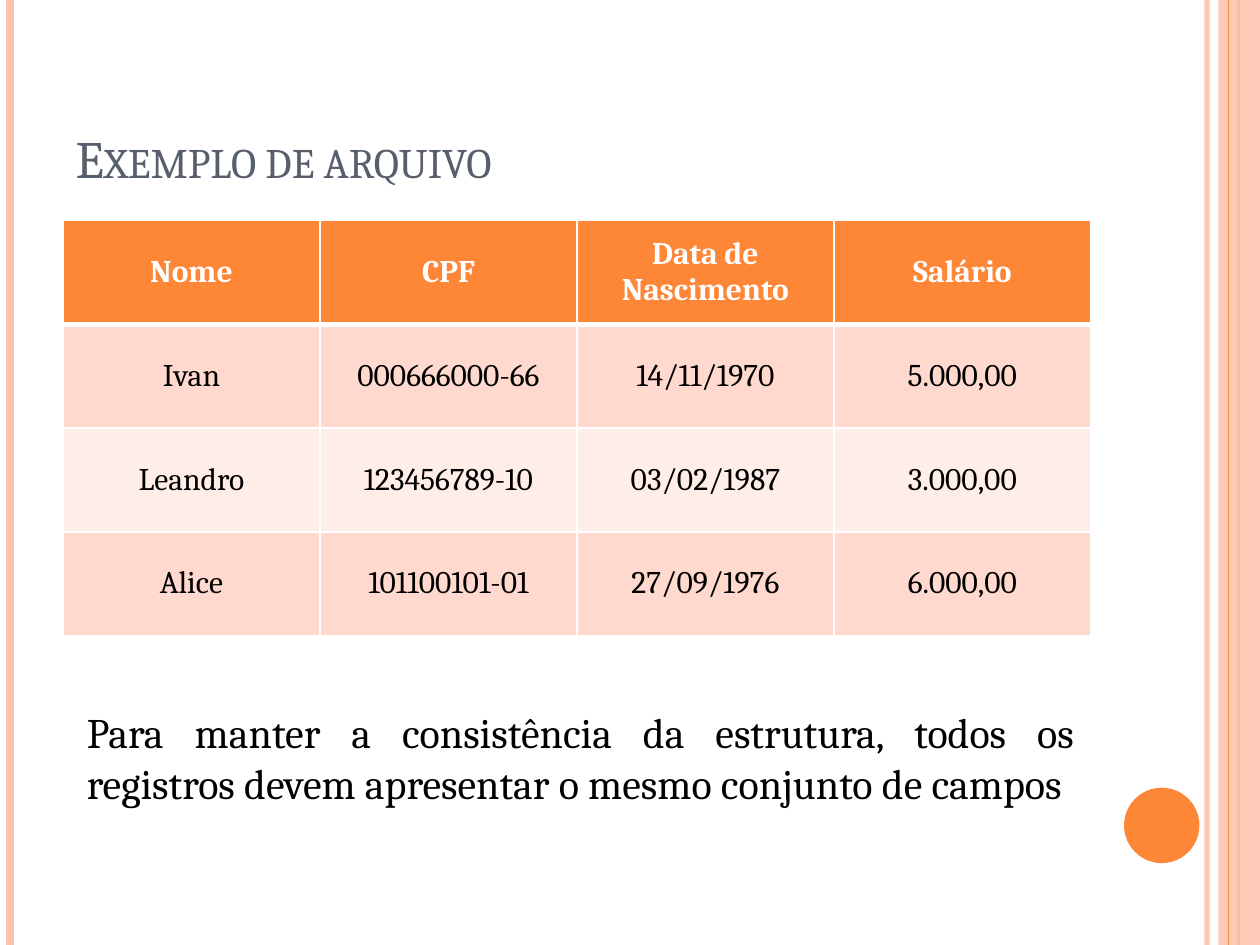
from lxml import etree
from pptx import Presentation
from pptx.dml.color import RGBColor
from pptx.enum.shapes import MSO_CONNECTOR, MSO_SHAPE
from pptx.enum.text import MSO_ANCHOR, MSO_AUTO_SIZE, PP_ALIGN
from pptx.oxml import parse_xml
from pptx.oxml.ns import qn
from pptx.util import Cm, Pt

STRAIGHT = MSO_CONNECTOR.STRAIGHT
RECT, OVAL = MSO_SHAPE.RECTANGLE, MSO_SHAPE.OVAL
LEFT, CENTER, JUSTIFY = PP_ALIGN.LEFT, PP_ALIGN.CENTER, PP_ALIGN.JUSTIFY
MIDDLE, BOTTOM = MSO_ANCHOR.MIDDLE, MSO_ANCHOR.BOTTOM
NO_FIT = MSO_AUTO_SIZE.NONE
ORANGE, PINK, WHITE, BLACK = "FE8637", "FEC3AE", "FFFFFF", "000000"
NS = "http://schemas.openxmlformats.org/drawingml/2006/main"


def rgb(value):
    return RGBColor.from_string(value)


def write(tf, text, align, color, **font):
    p = tf.paragraphs[0]
    p.alignment = align
    r = p.add_run()
    r.text = text
    r.font.color.rgb = rgb(color)
    for name, value in {"name": "Cambria", **font}.items():
        setattr(r.font, name, value)
    return r


prs = Presentation()
prs.slide_width, prs.slide_height = Cm(25.4), Cm(19.05)
s = prs.slides.add_slide(prs.slide_layouts[5])

# Side stripes and circle, back to front: x, width (pt), colour, opacity (%)
stripes = [(24.33, 3, PINK, 93), (0.2, 4.5, PINK, 100),
           (24.97, 1.5, ORANGE, 100), (24.77, 0.75, ORANGE, 100)]
band = (RECT, 24.56, 0, 0.84, 19.05, PINK, 87)
circle = (OVAL, 22.66, 15.88, 1.52, 1.52, ORANGE, 100)
for part in [*stripes[:3], band, stripes[3], circle]:
    *place, color, opacity = part
    if part in stripes:
        x, width = place
        sp = s.shapes.add_connector(STRAIGHT, Cm(x), 0, Cm(x), prs.slide_height)
        sp.line.width = Pt(width)
        fill = sp.line.fill
    else:
        kind, *box = place
        sp = s.shapes.add_shape(kind, *map(Cm, box))
        sp.shadow.inherit = False
        sp.line.fill.background()
        fill = sp.fill
    fill.solid()
    fill.fore_color.rgb = rgb(color)
    if part in stripes:
        etree.SubElement(sp._element.spPr, qn("a:effectLst"))
    if opacity < 100:
        clr = next(sp._element.spPr.iter(qn("a:srgbClr")))
        etree.SubElement(clr, qn("a:alpha"), val=str(opacity * 1000))

# Title
title = s.shapes.title
title.left, title.top, title.width, title.height = map(Cm, (1.27, 0.76, 20.75, 3.18))
tf = title.text_frame
tf.auto_size = NO_FIT
tf.vertical_anchor = BOTTOM
r = write(tf, "Exemplo de arquivo", LEFT, "575F6D", size=Pt(30))
r.font._element.set("cap", "small")

# Table of records
rows = [
    ("Nome", "CPF", "Data de Nascimento", "Salário"),
    ("Ivan", "000666000-66", "14/11/1970", "5.000,00"),
    ("Leandro", "123456789-10", "03/02/1987", "3.000,00"),
    ("Alice", "101100101-01", "27/09/1976", "6.000,00"),
]
row_fills = [ORANGE, "FFD9CE", "FFEDE8", "FFD9CE"]
table = s.shapes.add_table(4, 4, Cm(1.27), Cm(4.45), Cm(20.72), Cm(8.36)).table
for i, values in enumerate(rows):
    for j, value in enumerate(values):
        cell = table.cell(i, j)
        cell.vertical_anchor = MIDDLE
        tcPr = cell._tc.get_or_add_tcPr()
        for side in "LRTB":
            thick = (i, side) in ((0, "B"), (1, "T"))
            tcPr.append(parse_xml(
                f'<a:ln{side} xmlns:a="{NS}" w="{Pt(3 if thick else 1)}"><a:solidFill>'
                f'<a:srgbClr val="{WHITE}"/></a:solidFill></a:ln{side}>'))
        cell.fill.solid()
        cell.fill.fore_color.rgb = rgb(row_fills[i])
        write(cell.text_frame, value, CENTER, BLACK if i else WHITE, size=Pt(18), bold=i == 0)

# Note below the table
tf = s.shapes.add_textbox(Cm(1.5), Cm(14.12), Cm(20.4), Cm(3.35)).text_frame
tf.word_wrap = True
write(tf, "Para manter a consistência da estrutura, todos os registros devem "
      "apresentar o mesmo conjunto de campos", JUSTIFY, BLACK, size=Pt(24))

prs.save("out.pptx")
